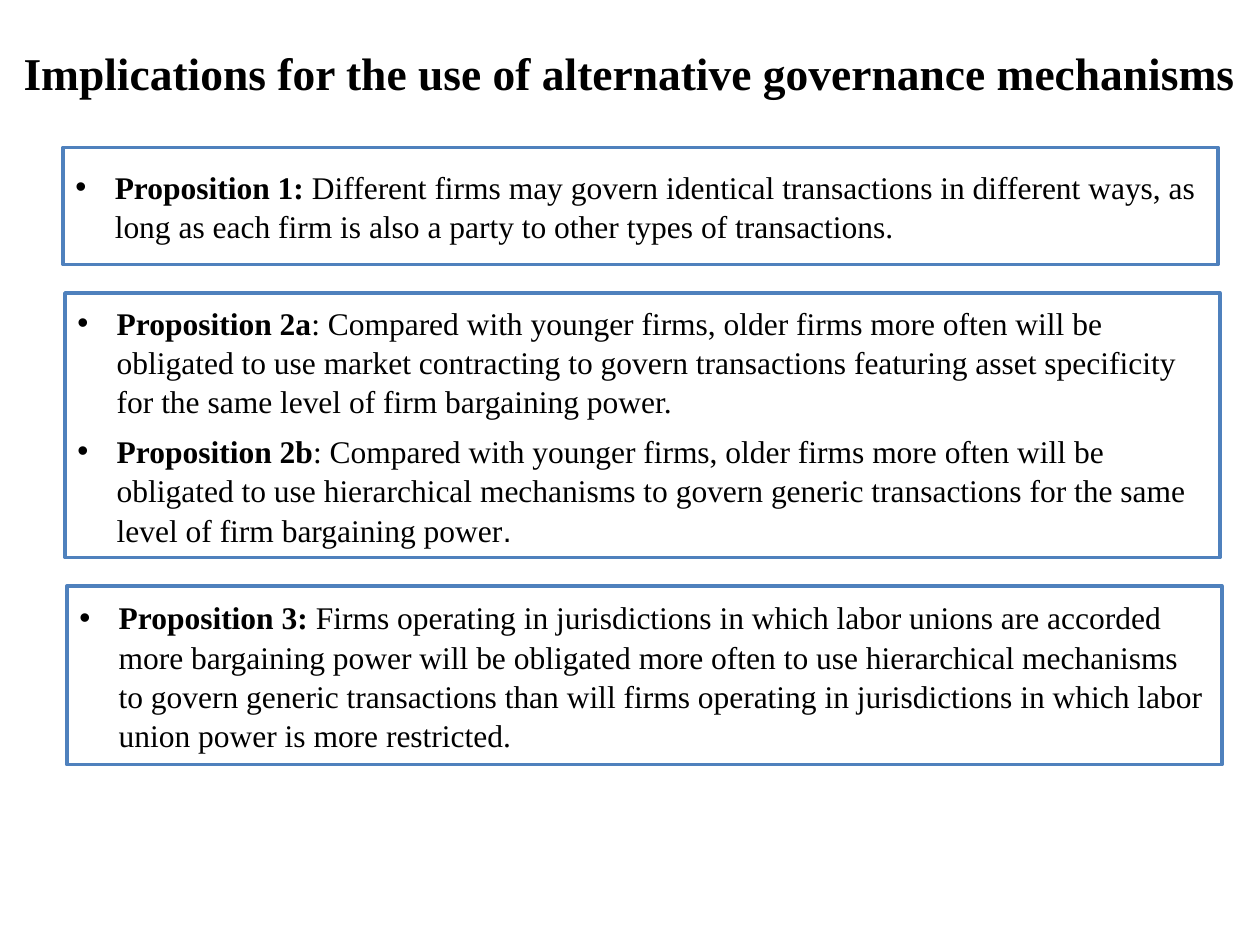
from dataclasses import dataclass

from pptx import Presentation
from pptx.dml.color import RGBColor as Color
from pptx.enum.shapes import MSO_SHAPE as Shape
from pptx.enum.text import MSO_ANCHOR as Anchor, PP_ALIGN as Align
from pptx.oxml.ns import qn
from pptx.util import Pt
from lxml.etree import SubElement


@dataclass(frozen=True)
class Theme:
    font: str = "Times New Roman"
    bullet_font: str = "Arial"
    title_size: float = 26
    body_size: float = 18
    text: Color = Color(0, 0, 0)
    fill: Color = Color(255, 255, 255)
    border: Color = Color(0x4F, 0x81, 0xBD)
    border_width: float = 2
    indent: float = 22.5
    paragraph_gap: float = 6
    line_spacing: float = 1.04


class SlideBuilder:
    def __init__(self, slide, theme):
        self.slide = slide
        self.theme = theme

    def style(self, paragraph, size):
        font = paragraph.font
        font.name, font.size = self.theme.font, Pt(size)
        font.color.rgb = self.theme.text

    def title(self, text, left, top, width, height):
        title = self.slide.shapes.title
        title.left, title.top = Pt(left), Pt(top)
        title.width, title.height = Pt(width), Pt(height)
        frame = title.text_frame
        frame.text = text
        frame.word_wrap = True
        frame.vertical_anchor = Anchor.MIDDLE
        paragraph = frame.paragraphs[0]
        paragraph.alignment = Align.CENTER
        self.style(paragraph, self.theme.title_size)
        paragraph.font.bold = True

    def bullet(self, paragraph):
        properties = paragraph._p.get_or_add_pPr()
        properties.set("marL", str(Pt(self.theme.indent)))
        properties.set("indent", str(-Pt(self.theme.indent)))
        SubElement(properties, qn("a:buFont"), typeface=self.theme.bullet_font)
        SubElement(properties, qn("a:buChar"), char="•")

    def proposition_box(self, propositions, left, top, width, height):
        box = self.slide.shapes.add_shape(
            Shape.RECTANGLE, Pt(left), Pt(top), Pt(width), Pt(height))
        box.shadow.inherit = False
        box.fill.solid()
        box.fill.fore_color.rgb = self.theme.fill
        box.line.color.rgb = self.theme.border
        box.line.width = Pt(self.theme.border_width)
        frame = box.text_frame
        frame.word_wrap = True
        frame.vertical_anchor = Anchor.MIDDLE
        for index, (label, statement, *ending) in enumerate(propositions):
            paragraph = frame.add_paragraph() if index else frame.paragraphs[0]
            self.bullet(paragraph)
            paragraph.alignment = Align.LEFT
            paragraph.line_spacing = self.theme.line_spacing
            if index:
                paragraph.space_before = Pt(self.theme.paragraph_gap)
            self.style(paragraph, self.theme.body_size)
            for text in (label, statement, *ending):
                run = paragraph.add_run()
                run.text = text
                run.font.bold = text == label
                if text in ending:
                    run.font.name = self.theme.bullet_font


# Each box: its height and its (label, statement, optional ending) rows
BOXES = [
    (67, [("Proposition 1:",
           " Different firms may govern identical transactions in different "
           "ways, as long as each firm is also a party to other types of "
           "transactions.")]),
    (151.2, [("Proposition 2a",
              ": Compared with younger firms, older firms more often will be "
              "obligated to use market contracting to govern transactions "
              "featuring asset specificity for the same level of firm "
              "bargaining power."),
             ("Proposition 2b",
              ": Compared with younger firms, older firms more often will be "
              "obligated to use hierarchical mechanisms to govern generic "
              "transactions for the same level of firm bargaining power",
              ".")]),
    (102.2, [("Proposition 3:",
              " Firms operating in jurisdictions in which labor unions are "
              "accorded more bargaining power will be obligated more often to "
              "use hierarchical mechanisms to govern generic transactions than "
              "will firms operating in jurisdictions in which labor union "
              "power is more restricted.")]),
]
BOX_LEFT, BOX_TOP, BOX_WIDTH = 36, 84.2, 660
BOX_GAP, BOX_SHIFT = 16.2, 1.1


def main():
    presentation = Presentation()
    presentation.slide_width, presentation.slide_height = Pt(720), Pt(540)
    title_only = presentation.slide_layouts[5]
    builder = SlideBuilder(presentation.slides.add_slide(title_only), Theme())

    # Heading
    builder.title("Implications for the use of alternative governance mechanisms",
                  0, 11.5, 720, 60)

    # Propositions, stacked with equal gaps and a slight step to the right
    top = BOX_TOP
    for index, (height, propositions) in enumerate(BOXES):
        builder.proposition_box(
            propositions, BOX_LEFT + index * BOX_SHIFT, top, BOX_WIDTH, height)
        top += height + BOX_GAP

    presentation.save("out.pptx")


if __name__ == "__main__":
    main()
